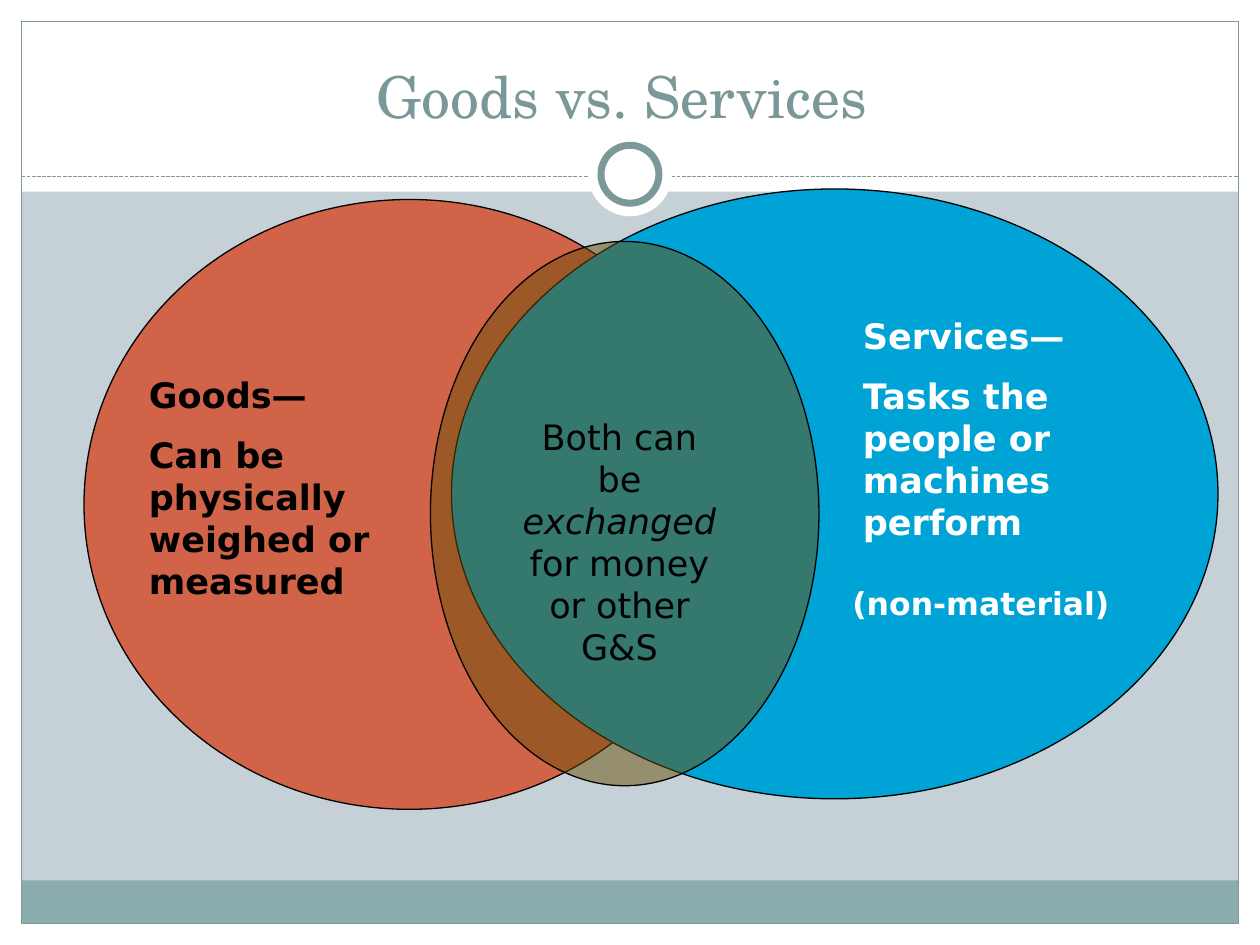
"""Build the Goods vs. Services Venn diagram slide."""
from dataclasses import dataclass
from typing import Optional

from lxml import etree
from pptx import Presentation
from pptx.dml.color import RGBColor
from pptx.enum import dml, shapes, text
from pptx.oxml import ns
from pptx.util import Pt


@dataclass(frozen=True)
class Theme:
    """Colours, fonts and type sizes."""
    back: str = "C5D1D7"
    white: str = "FFFFFF"
    black: str = "000000"
    band: str = "8CADAE"
    rule: str = "7C999A"
    title: str = "7B9899"
    goods: str = "D16349"
    services: str = "00A3D6"
    both: str = "694F07"
    title_font: str = "TeX Gyre Schola"
    body_font: str = "DejaVu Sans"
    title_size: float = 33
    body_size: float = 20
    note_size: float = 18
    para_gap: float = 10.3


@dataclass(frozen=True)
class Box:
    """A rectangle in points."""
    x: float
    y: float
    w: float
    h: float


@dataclass(frozen=True)
class Figure:
    """A filled or outlined preset shape."""
    kind: shapes.MSO_SHAPE
    box: Box
    fill: Optional[str] = None
    line: Optional[str] = None
    weight: float = 0.75
    alpha: Optional[int] = None


@dataclass(frozen=True)
class Run:
    """A piece of text in one style."""
    words: str
    bold: bool = False
    italic: bool = False


@dataclass(frozen=True)
class Label:
    """A text box holding paragraphs of runs."""
    box: Box
    paras: tuple[tuple[Run, ...], ...]
    color: str
    size: float
    align: text.PP_ALIGN = text.PP_ALIGN.LEFT


T = Theme()
W, H = 720, 540
EDGE = 12.24
RULE_Y = 100.8
RECT, OVAL = shapes.MSO_SHAPE.RECTANGLE, shapes.MSO_SHAPE.OVAL


def ring_box(d: float) -> Box:
    """Return a square box centred on the ring under the title."""
    return Box((W - d) / 2, 99.6 - d / 2, d, d)


PANELS = (
    Figure(RECT, Box(0, H - EDGE, W, EDGE), T.white),
    Figure(RECT, Box(0, 0, W, 109.5), T.white),
    Figure(RECT, Box(0, 0, EDGE, H), T.white),
    Figure(RECT, Box(W - EDGE, 0, EDGE, H), T.white),
    Figure(RECT, Box(EDGE, 503, W - 2 * EDGE, 24.76), T.band),
    Figure(RECT, Box(EDGE, EDGE, W - 2 * EDGE, H - 2 * EDGE), line=T.rule),
)
RING = (
    Figure(OVAL, ring_box(48), T.white),
    Figure(OVAL, ring_box(33.12), T.white, T.rule, 4),
)
VENN = (
    Figure(OVAL, Box(48, 114, 372, 348.5), T.goods, T.black),
    Figure(OVAL, Box(258, 108, 438, 348.5), T.services, T.black),
    Figure(OVAL, Box(246, 138, 222, 311), T.both, T.black, alpha=50),
)
LABELS = (
    Label(Box(288, 234, 132, 152.6),
          ((Run("Both can be "), Run("exchanged", italic=True),
            Run(" for money or other G&S")),),
          T.black, T.body_size, text.PP_ALIGN.CENTER),
    Label(Box(78, 210, 175, 140.4),
          ((Run("Goods—", True),),
           (Run("Can be physically weighed or measured", True),)),
          T.black, T.body_size),
    Label(Box(486, 176.4, 145.4, 140.4),
          ((Run("Services—", True),),
           (Run("Tasks the people or machines perform", True),)),
          T.white, T.body_size),
    Label(Box(480, 330, 200, 54.7), ((Run("(non-material)", True),),),
          T.white, T.note_size),
)


def rgb(code: str) -> RGBColor:
    """Return the colour for a hex code."""
    return RGBColor.from_string(code)


def place(box: Box) -> tuple[Pt, ...]:
    """Return a box as lengths."""
    return Pt(box.x), Pt(box.y), Pt(box.w), Pt(box.h)


def draw_figure(parent, fig: Figure) -> None:
    """Draw one preset shape."""
    sp = parent.add_shape(fig.kind, *place(fig.box))
    sp.shadow.inherit = False
    if fig.fill:
        sp.fill.solid()
        sp.fill.fore_color.rgb = rgb(fig.fill)
    else:
        sp.fill.background()
    if fig.alpha is not None:
        clr = sp.fill._xPr.find(".//" + ns.qn("a:srgbClr"))
        etree.SubElement(clr, ns.qn("a:alpha"), val=str(fig.alpha * 1000))
    if fig.line:
        sp.line.color.rgb = rgb(fig.line)
        sp.line.width = Pt(fig.weight)
    else:
        sp.line.fill.background()


def draw_rule(parent) -> None:
    """Draw the dashed rule under the title."""
    ln = parent.add_connector(shapes.MSO_CONNECTOR.STRAIGHT, Pt(EDGE),
                              Pt(RULE_Y), Pt(W - EDGE), Pt(RULE_Y))
    ln.line.color.rgb = rgb(T.rule)
    ln.line.width = Pt(0.75)
    ln.line.dash_style = dml.MSO_LINE.SQUARE_DOT
    dash = ln._element.spPr.find(".//" + ns.qn("a:prstDash"))
    dash.set("val", "sysDash")
    etree.SubElement(ln._element.spPr, ns.qn("a:effectLst"))


def add_run(p, run: Run, font: str, size: float, color: str) -> None:
    """Add a styled run to a paragraph."""
    r = p.add_run()
    r.text = run.words
    r.font.name, r.font.size = font, Pt(size)
    r.font.bold, r.font.italic = run.bold, run.italic
    r.font.color.rgb = rgb(color)


def draw_label(parent, label: Label) -> None:
    """Draw one text box."""
    tf = parent.add_textbox(*place(label.box)).text_frame
    tf.word_wrap = True
    tf.auto_size = text.MSO_AUTO_SIZE.SHAPE_TO_FIT_TEXT
    for i, runs in enumerate(label.paras):
        p = tf.add_paragraph() if i else tf.paragraphs[0]
        p.alignment = label.align
        p.space_before = Pt(T.para_gap if i else 0)
        for run in runs:
            add_run(p, run, T.body_font, label.size, label.color)


def set_title(s, words: str) -> None:
    """Format the title and bring it in front of the panels."""
    sp = s.shapes.title
    sp.left, sp.top, sp.width, sp.height = place(Box(24, 18, 672, 60))
    tf = sp.text_frame
    tf.auto_size = text.MSO_AUTO_SIZE.NONE
    tf.vertical_anchor = text.MSO_ANCHOR.BOTTOM
    p = tf.paragraphs[0]
    p.alignment = text.PP_ALIGN.CENTER
    add_run(p, Run(words), T.title_font, T.title_size, T.title)
    s.shapes._spTree.append(sp._element)


def main() -> None:
    """Build and save the slide."""
    prs = Presentation()
    prs.slide_width, prs.slide_height = Pt(W), Pt(H)
    s = prs.slides.add_slide(prs.slide_layouts.get_by_name("Title Only"))
    s.background.fill.solid()
    s.background.fill.fore_color.rgb = rgb(T.back)
    for fig in PANELS:
        draw_figure(s.shapes, fig)
    draw_rule(s.shapes)
    for fig in RING:
        draw_figure(s.shapes, fig)
    set_title(s, "Goods vs. Services ")
    venn = s.shapes.add_group_shape().shapes
    for fig in VENN:
        draw_figure(venn, fig)
    for label in LABELS:
        draw_label(venn, label)
    prs.save("out.pptx")


if __name__ == "__main__":
    main()
